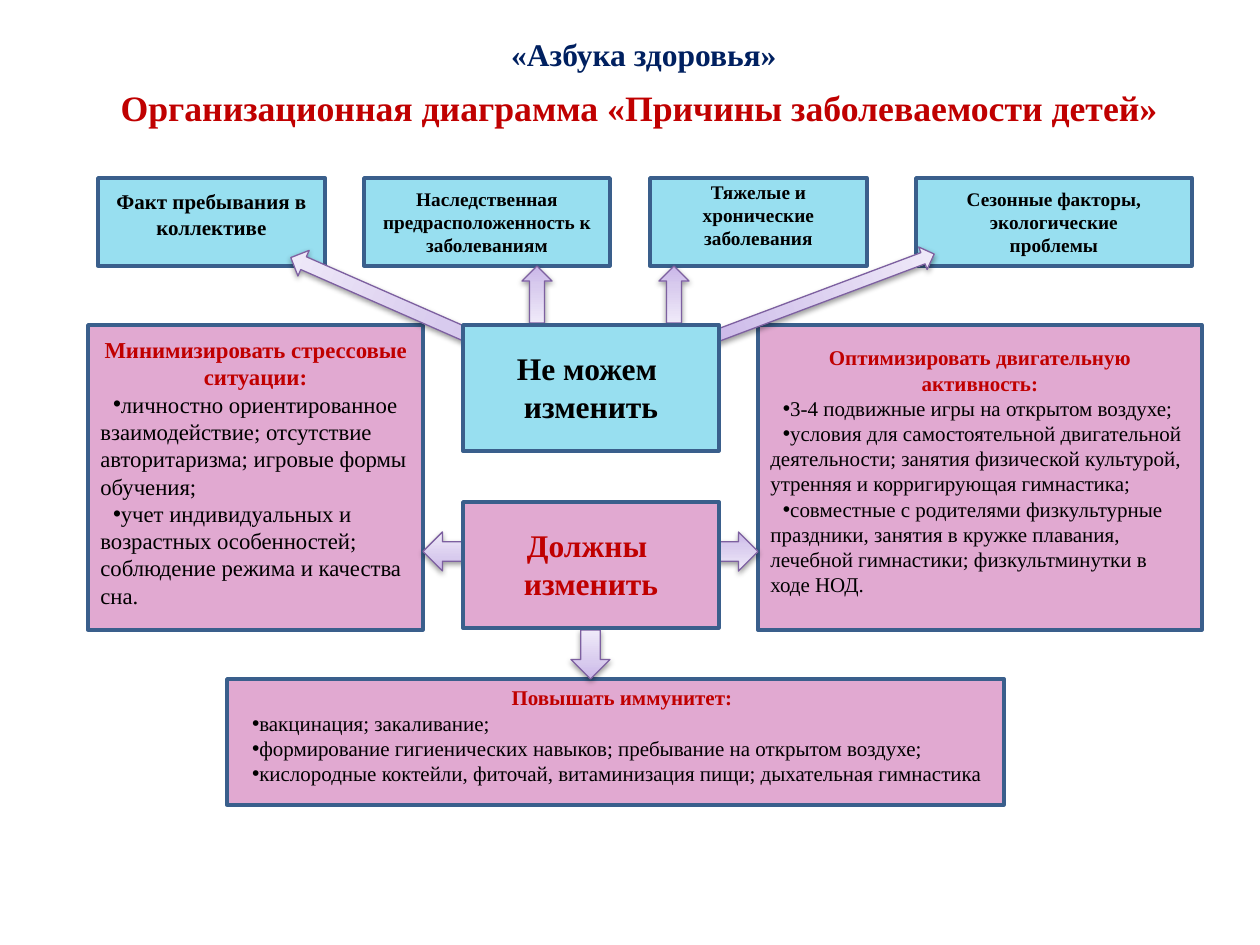
from lxml import etree
from pptx import Presentation
from pptx import util as u
from pptx.dml.color import RGBColor
from pptx.enum import shapes, text
from pptx.oxml import parse_xml
from pptx.oxml.ns import qn

PX = 914400 / 126
FONT = "Times New Roman"
NS = 'xmlns:a="http://schemas.openxmlformats.org/drawingml/2006/main"'
HUE = {"blue": "98DFF0", "pink": "E1A9D1", "edge": "3A5F8C", "red": "C00000",
       "navy": "002060", "black": "000000", "white": "FFFFFF", "rim": "7D60A0"}
GRAD = f"""<a:gradFill {NS} rotWithShape="1"><a:gsLst>
<a:gs pos="0"><a:srgbClr val="C9B5E8"/></a:gs>
<a:gs pos="35000"><a:srgbClr val="D8CBEE"/></a:gs>
<a:gs pos="100000"><a:srgbClr val="F0EAF9"/></a:gs>
</a:gsLst><a:lin ang="16200000" scaled="1"/></a:gradFill>"""
GLOW = f"""<a:effectLst {NS}><a:outerShdw blurRad="40000" dist="20000" dir="5400000"
rotWithShape="0"><a:srgbClr val="000000"><a:alpha val="38000"/></a:srgbClr>
</a:outerShdw></a:effectLst>"""
KIND = shapes.MSO_SHAPE


def rgb(name):
    return RGBColor.from_string(HUE[name])


def add_box(area, fill, top, size, pitch, color, head, items=(), shift=0):
    """Box with bold centred lines, then bullets; top is the text inset, pitch the line step."""
    box = slide.shapes.add_shape(KIND.RECTANGLE, *[round(n * PX) for n in area])
    box.shadow.inherit = False
    box.fill.solid()
    box.fill.fore_color.rgb = rgb(fill)
    box.line.color.rgb = rgb("edge")
    box.line.width = u.Pt(2)
    frame = box.text_frame
    frame.word_wrap = True
    frame.vertical_anchor = text.MSO_ANCHOR.TOP
    frame.margin_top = round(top * PX)
    frame.margin_bottom = 0
    frame.text = "\n".join([*head, *items])
    for i, para in enumerate(frame.paragraphs):
        title = i < len(head)
        para.alignment = text.PP_ALIGN.CENTER if title else text.PP_ALIGN.LEFT
        para.line_spacing = u.Pt(round(pitch * 72 / 126, 2))
        props = para._p.get_or_add_pPr()
        if title:
            props.set("indent", str(round(shift * PX)))
        else:
            props.set("marL", "0")
            props.set("indent", "91440")
            etree.SubElement(props, qn("a:buFont")).set("typeface", "Arial")
            etree.SubElement(props, qn("a:buChar")).set("char", "•")
        for run in para.runs:
            run.font.name = FONT
            run.font.size = u.Pt(size)
            run.font.bold = title
            run.font.color.rgb = rgb(color if title else "black")


deck = Presentation()
deck.slide_width, deck.slide_height = u.Inches(10), u.Inches(7.5)
slide = deck.slides.add_slide(deck.slide_layouts[6])

# Headings
for area, words, size, color in [
    ((88, 78, 1102, 59), "Организационная диаграмма «Причины заболеваемости детей»", 20.4, "red"),
    ((393, 38, 502, 32), "«Азбука здоровья»", 18, "navy"),
]:
    box = slide.shapes.add_textbox(*[round(n * PX) for n in area])
    box.fill.solid()
    box.fill.fore_color.rgb = rgb("white")
    frame = box.text_frame
    frame.word_wrap = True
    frame.vertical_anchor = text.MSO_ANCHOR.MIDDLE
    frame.text = words
    para = frame.paragraphs[0]
    para.alignment = text.PP_ALIGN.CENTER
    font = para.runs[0].font
    font.name, font.size, font.bold = FONT, u.Pt(size), True
    font.color.rgb = rgb(color)

# Causes that cannot be changed
for left, width, top, size, pitch, head in [
    (98, 227, 10, 12, 26, ["Факт пребывания в коллективе"]),
    (364, 246, 9, 11, 23, ["Наследственная предрасположенность к заболеваниям"]),
    (650, 217, 2, 11, 23, ["Тяжелые и хронические заболевания"]),
    (916, 276, 9, 11, 23, ["Сезонные факторы, экологические", "проблемы"]),
]:
    add_box((left, 178, width, 88), "blue", top, size, pitch, "black", head)

# Measures that must be taken
add_box((88, 325, 335, 305), "pink", 11, 13, 27.3, "red",
        ["Минимизировать стрессовые ситуации:"],
        ["личностно ориентированное взаимодействие; отсутствие авторитаризма; "
         "игровые формы обучения;",
         "учет индивидуальных и возрастных особенностей; "
         "соблюдение режима и качества сна."])
add_box((758, 325, 444, 305), "pink", 20, 12, 25.2, "red",
        ["Оптимизировать двигательную активность:"],
        ["3-4 подвижные игры на открытом воздухе;",
         "условия для самостоятельной двигательной деятельности; занятия физической "
         "культурой, утренняя и корригирующая гимнастика;",
         "совместные с родителями физкультурные праздники, занятия в кружке плавания, "
         "лечебной гимнастики; физкультминутки в ходе НОД."])
add_box((227, 679, 777, 126), "pink", 6, 12, 25.2, "red",
        ["Повышать иммунитет:"],
        ["вакцинация; закаливание;",
         "формирование гигиенических навыков; пребывание на открытом воздухе;",
         "кислородные коктейли, фиточай, витаминизация пищи; дыхательная гимнастика"],
        shift=13)

# Block arrows
for kind, area, turn in [
    (KIND.DOWN_ARROW, (522, 266, 30, 57), 180),
    (KIND.DOWN_ARROW, (659, 266, 30, 57), 180),
    (KIND.UP_ARROW, (808, 175, 24, 244), 69.4),
    (KIND.UP_ARROW, (394, 181, 28, 256), 293.7),
    (KIND.LEFT_ARROW, (423, 532, 49, 39), 0),
    (KIND.LEFT_ARROW, (699, 532, 59, 39), 180),
    (KIND.DOWN_ARROW, (571, 630, 39, 49), 0),
]:
    arrow = slide.shapes.add_shape(kind, *[round(n * PX) for n in area])
    arrow.rotation = turn
    arrow.line.color.rgb = rgb("rim")
    arrow.line.width = u.Pt(0.75)
    props = arrow._element.spPr
    props.find(qn("a:ln")).addprevious(parse_xml(GRAD))
    props.append(parse_xml(GLOW))

# Central boxes
for top, fill, color, word in [(325, "blue", "black", "Не можем "),
                               (502, "pink", "red", "Должны ")]:
    add_box((463, top, 256, 126), fill, 24, 18, 38, color, [word, "изменить"])

deck.save("out.pptx")
